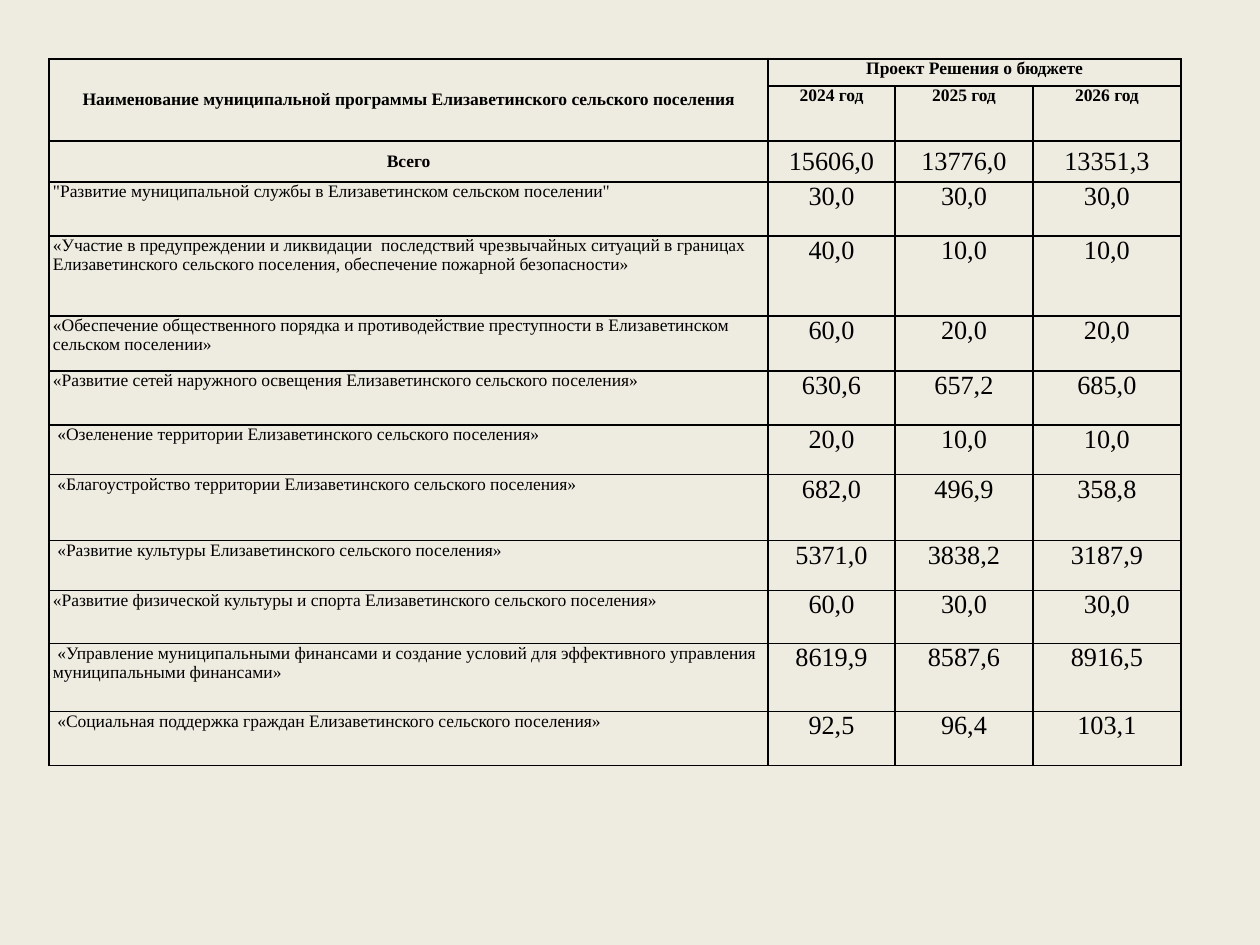
from dataclasses import dataclass

from lxml.etree import SubElement
from pptx import Presentation
from pptx.dml.color import RGBColor
from pptx.enum.text import MSO_ANCHOR, PP_ALIGN
from pptx.oxml.ns import qn
from pptx.table import Table, _Cell
from pptx.util import Emu, Pt


@dataclass(frozen=True)
class Theme:
    back: str = "EEECE1"
    ink: str = "000000"
    font: str = "Times New Roman"
    text: int = 10
    value: int = 15
    line: int = 1


@dataclass(frozen=True)
class Style:
    size: int
    bold: bool = False
    align: PP_ALIGN = PP_ALIGN.CENTER
    anchor: MSO_ANCHOR = MSO_ANCHOR.TOP


@dataclass(frozen=True)
class Program:
    name: str
    sums: tuple[str, str, str]
    high: int


THEME = Theme()
HEAD = Style(THEME.text, bold=True)
MID = Style(THEME.text, bold=True, anchor=MSO_ANCHOR.MIDDLE)
TOTAL = Style(THEME.value, anchor=MSO_ANCHOR.MIDDLE)
NAME = Style(THEME.text, align=PP_ALIGN.LEFT)
VALUE = Style(THEME.value)

LEFT, TOP, PAD = 49, 59, 4
WIDTHS = (719, 127, 138, 148)
HEADS = (27, 55)
YEARS = ("2024 год", "2025 год", "2026 год")

# The total comes first, then the programs
ROWS = (
    Program("Всего", ("15606,0", "13776,0", "13351,3"), 41),
    Program('"Развитие муниципальной службы в Елизаветинском сельском поселении"',
            ("30,0", "30,0", "30,0"), 54),
    Program("«Участие в предупреждении и ликвидации  последствий чрезвычайных ситуаций "
            "в границах Елизаветинского сельского поселения, обеспечение пожарной "
            "безопасности»", ("40,0", "10,0", "10,0"), 80),
    Program("«Обеспечение общественного порядка и противодействие преступности "
            "в Елизаветинском сельском поселении»", ("60,0", "20,0", "20,0"), 55),
    Program("«Развитие сетей наружного освещения Елизаветинского сельского поселения»",
            ("630,6", "657,2", "685,0"), 54),
    Program(" «Озеленение территории Елизаветинского сельского поселения»",
            ("20,0", "10,0", "10,0"), 50),
    Program(" «Благоустройство территории Елизаветинского сельского поселения»",
            ("682,0", "496,9", "358,8"), 66),
    Program(" «Развитие культуры Елизаветинского сельского поселения»",
            ("5371,0", "3838,2", "3187,9"), 50),
    Program("«Развитие физической культуры и спорта Елизаветинского сельского поселения»",
            ("60,0", "30,0", "30,0"), 53),
    Program(" «Управление муниципальными финансами и создание условий для эффективного "
            "управления муниципальными финансами»", ("8619,9", "8587,6", "8916,5"), 68),
    Program(" «Социальная поддержка граждан Елизаветинского сельского поселения»",
            ("92,5", "96,4", "103,1"), 54),
)


def px(count: int) -> Emu:
    return Emu(round(count * 914400 / 126))


def frame(cell: _Cell) -> None:
    """Draw the four borders and leave the cell clear."""
    props = cell._tc.get_or_add_tcPr()
    for side in ("a:lnL", "a:lnR", "a:lnT", "a:lnB"):
        line = SubElement(props, qn(side), w=str(Pt(THEME.line)))
        fill = SubElement(line, qn("a:solidFill"))
        SubElement(fill, qn("a:srgbClr"), val=THEME.ink)
    cell.fill.background()


def write(cell: _Cell, text: str, style: Style) -> None:
    cell.text = text
    cell.vertical_anchor = style.anchor
    para = cell.text_frame.paragraphs[0]
    para.alignment = style.align
    para.font.name = THEME.font
    para.font.size = Pt(style.size)
    para.font.bold = style.bold
    para.font.color.rgb = RGBColor.from_string(THEME.ink)


def fill_row(table: Table, row: int, item: Program, name: Style, value: Style) -> None:
    write(table.cell(row, 0), item.name, name)
    for col, text in enumerate(item.sums, 1):
        write(table.cell(row, col), text, value)


def main() -> None:
    deck = Presentation()
    deck.slide_width, deck.slide_height = px(1260), px(945)
    slide = deck.slides.add_slide(deck.slide_layouts[6])
    slide.background.fill.solid()
    slide.background.fill.fore_color.rgb = RGBColor.from_string(THEME.back)

    # Grid
    highs = HEADS + tuple(item.high for item in ROWS)
    table = slide.shapes.add_table(
        len(highs), len(WIDTHS), px(LEFT), px(TOP), px(sum(WIDTHS)), px(sum(highs))
    ).table
    table.first_row = table.horz_banding = False
    for col, wide in zip(table.columns, WIDTHS):
        col.width = px(wide)
    for row, high in zip(table.rows, highs):
        row.height = px(high)
    for cell in table.iter_cells():
        cell.margin_left = cell.margin_right = px(PAD)
        cell.margin_top = cell.margin_bottom = 0
        frame(cell)

    # Heading
    table.cell(0, 0).merge(table.cell(1, 0))
    table.cell(0, 1).merge(table.cell(0, 3))
    write(table.cell(0, 0),
          "Наименование муниципальной программы Елизаветинского сельского поселения", MID)
    write(table.cell(0, 1), "Проект Решения о бюджете", HEAD)
    for col, year in enumerate(YEARS, 1):
        write(table.cell(1, col), year, HEAD)

    # Total and programs
    start = len(HEADS)
    fill_row(table, start, ROWS[0], MID, TOTAL)
    for row, item in enumerate(ROWS[1:], start + 1):
        fill_row(table, row, item, NAME, VALUE)

    deck.save("out.pptx")


if __name__ == "__main__":
    main()
